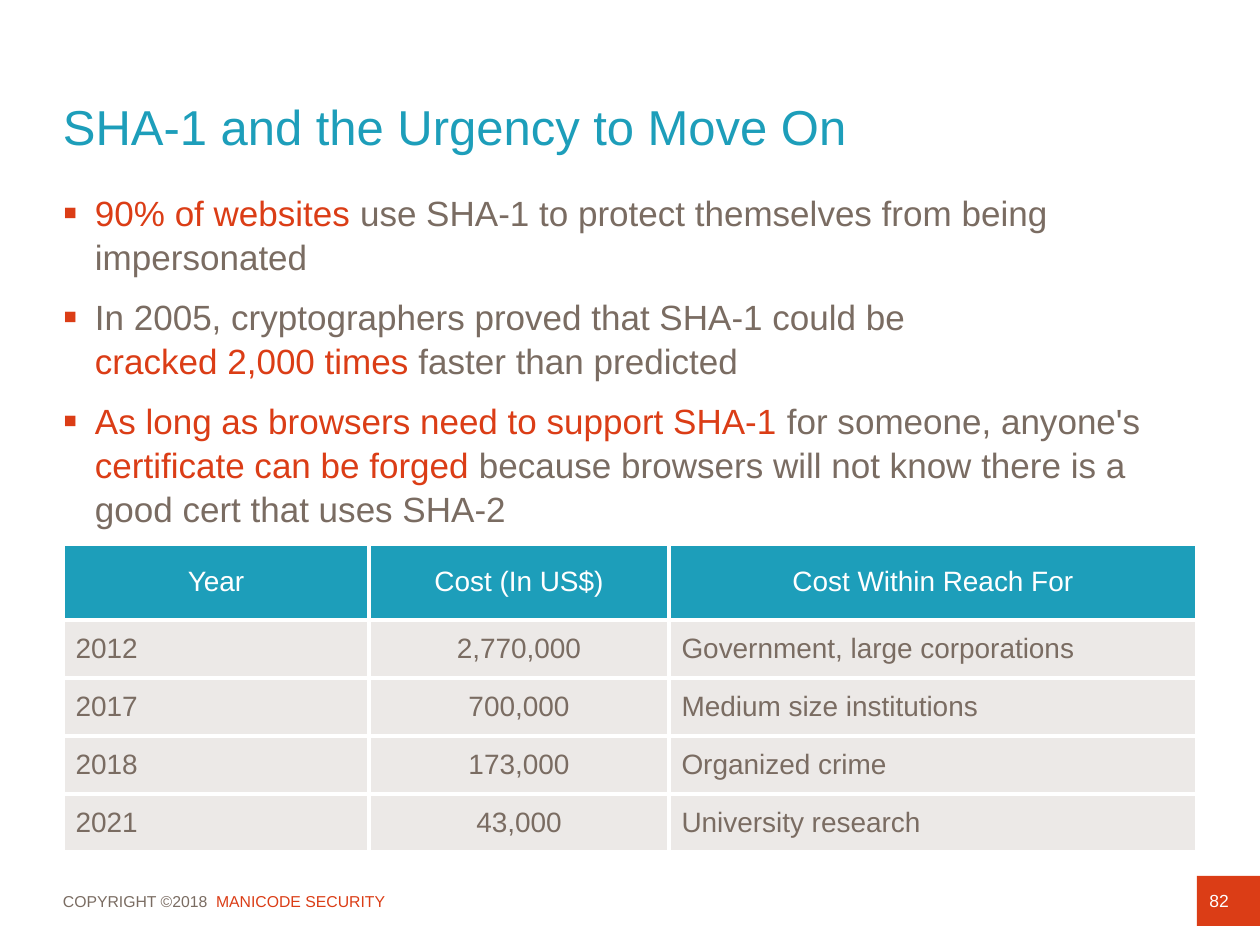
from dataclasses import dataclass

from pptx import Presentation
from pptx.dml.color import RGBColor
from pptx.enum.shapes import MSO_SHAPE as Shape
from pptx.enum.text import MSO_ANCHOR as Anchor, PP_ALIGN as Align
from pptx.oxml import parse_xml
from pptx.oxml.ns import nsdecls
from pptx.util import Emu, Pt

EMU_PER_PX = 914400 / 126
FONT = "Arial"
COLORS = {
    "teal": "1D9EBA",
    "red": "DB3D16",
    "brown": "7A6C62",
    "pale": "ECE9E7",
    "white": "FFFFFF",
}


@dataclass(frozen=True)
class Box:
    left: int
    top: int
    width: int
    height: int

    def emu(self) -> tuple:
        return tuple(px(n) for n in (self.left, self.top, self.width, self.height))


@dataclass(frozen=True)
class Span:
    text: str
    color: str
    starts_line: bool = False


@dataclass(frozen=True)
class Column:
    heading: str
    width: int
    align: Align


TITLE = Box(63, 63, 1134, 126)
BODY = Box(63, 189, 1134, 662)
TABLE = Box(63, 544, 1134, 308)
FOOTER = Box(63, 876, 1134, 50)
BADGE = Box(1197, 876, 63, 50)
HEADER_HEIGHT, ROW_HEIGHT = 76, 58

BULLETS = [
    [
        Span("90% of websites ", "red"),
        Span("use SHA-1 to protect themselves from being impersonated", "brown"),
    ],
    [
        Span("In 2005, cryptographers proved that SHA-1 could be", "brown"),
        Span("cracked 2,000 times", "red", starts_line=True),
        Span(" faster than predicted", "brown"),
    ],
    [
        Span("As long as browsers need to support SHA-1 ", "red"),
        Span("for someone, anyone's ", "brown"),
        Span("certificate can be forged ", "red"),
        Span("because browsers will not know there is a good cert that uses SHA-2", "brown"),
    ],
]
COLUMNS = [
    Column("Year", 306, Align.LEFT),
    Column("Cost (In US$)", 300, Align.CENTER),
    Column("Cost Within Reach For", 528, Align.LEFT),
]
ROWS = [
    ("2012", "2,770,000", "Government, large corporations"),
    ("2017", "700,000", "Medium size institutions"),
    ("2018", "173,000", "Organized crime"),
    ("2021", "43,000", "University research"),
]


def px(length: int) -> Emu:
    return Emu(round(length * EMU_PER_PX))


def rgb(color: str) -> RGBColor:
    return RGBColor.from_string(COLORS[color])


def style_font(font, size: int, color: str) -> None:
    font.name = FONT
    font.size = Pt(size)
    font.color.rgb = rgb(color)


def add_spans(paragraph, spans: list[Span], size: int) -> None:
    for span in spans:
        if span.starts_line:
            paragraph.add_line_break()
        run = paragraph.add_run()
        run.text = span.text
        style_font(run.font, size, span.color)


def add_text_box(slide, box: Box, anchor: Anchor):
    text_frame = slide.shapes.add_textbox(*box.emu()).text_frame
    text_frame.word_wrap = True
    text_frame.vertical_anchor = anchor
    text_frame.margin_left = text_frame.margin_right = 0
    text_frame.margin_top = text_frame.margin_bottom = 0
    return text_frame


def add_bullet_mark(paragraph) -> None:
    properties = paragraph._p.get_or_add_pPr()
    properties.set("marL", str(px(32)))
    properties.set("indent", str(px(-32)))
    for xml in (
        f'<a:buClr {nsdecls("a")}><a:srgbClr val="{COLORS["red"]}"/></a:buClr>',
        f'<a:buSzPct {nsdecls("a")} val="120000"/>',
        f'<a:buFont {nsdecls("a")} typeface="{FONT}"/>',
        f'<a:buChar {nsdecls("a")} char="▪"/>',
    ):
        properties.append(parse_xml(xml))


def add_bullets(slide, box: Box, bullets: list[list[Span]]) -> None:
    text_frame = add_text_box(slide, box, Anchor.TOP)
    for index, spans in enumerate(bullets):
        paragraph = text_frame.add_paragraph() if index else text_frame.paragraphs[0]
        add_bullet_mark(paragraph)
        paragraph.line_spacing = 1.05
        if index:
            paragraph.space_before = Pt(9)
        add_spans(paragraph, spans, 20)


def add_cell_borders(cell) -> None:
    properties = cell._tc.get_or_add_tcPr()
    for side in ("lnL", "lnR", "lnT", "lnB"):
        properties.append(parse_xml(
            f'<a:{side} {nsdecls("a")} w="{Pt(2.25)}"><a:solidFill>'
            f'<a:srgbClr val="{COLORS["white"]}"/></a:solidFill></a:{side}>'
        ))


def fill_cell(cell, text: str, align: Align, color: str, fill: str) -> None:
    add_cell_borders(cell)
    cell.fill.solid()
    cell.fill.fore_color.rgb = rgb(fill)
    cell.vertical_anchor = Anchor.MIDDLE
    cell.text_frame.text = text
    paragraph = cell.text_frame.paragraphs[0]
    paragraph.alignment = align
    style_font(paragraph.runs[0].font, 16, color)


def add_cost_table(slide) -> None:
    table = slide.shapes.add_table(len(ROWS) + 1, len(COLUMNS), *TABLE.emu()).table
    for index, row in enumerate(table.rows):
        row.height = px(ROW_HEIGHT if index else HEADER_HEIGHT)
    for index, column in enumerate(COLUMNS):
        table.columns[index].width = px(column.width)
        fill_cell(table.cell(0, index), column.heading, Align.CENTER, "white", "teal")
        for row_index, values in enumerate(ROWS, start=1):
            fill_cell(table.cell(row_index, index), values[index], column.align, "brown", "pale")


def add_page_badge(slide, number: str) -> None:
    shape = slide.shapes.add_shape(Shape.RECTANGLE, *BADGE.emu())
    shape.shadow.inherit = False
    shape.fill.solid()
    shape.fill.fore_color.rgb = rgb("red")
    shape.line.fill.background()
    shape.text_frame.vertical_anchor = Anchor.MIDDLE
    shape.text_frame.text = number
    paragraph = shape.text_frame.paragraphs[0]
    paragraph.alignment = Align.LEFT
    style_font(paragraph.runs[0].font, 10, "white")


def main() -> None:
    presentation = Presentation()
    presentation.slide_width, presentation.slide_height = px(1260), px(945)
    slide = presentation.slides.add_slide(presentation.slide_layouts[6])

    footer = add_text_box(slide, FOOTER, Anchor.MIDDLE)
    copyright_spans = [Span("COPYRIGHT ©2018  ", "brown"), Span("MANICODE SECURITY", "red")]
    add_spans(footer.paragraphs[0], copyright_spans, 9)
    title = add_text_box(slide, TITLE, Anchor.MIDDLE)
    add_spans(title.paragraphs[0], [Span("SHA-1 and the Urgency to Move On", "teal")], 28)
    add_bullets(slide, BODY, BULLETS)
    add_page_badge(slide, "82")
    add_cost_table(slide)
    presentation.save("out.pptx")


if __name__ == "__main__":
    main()
